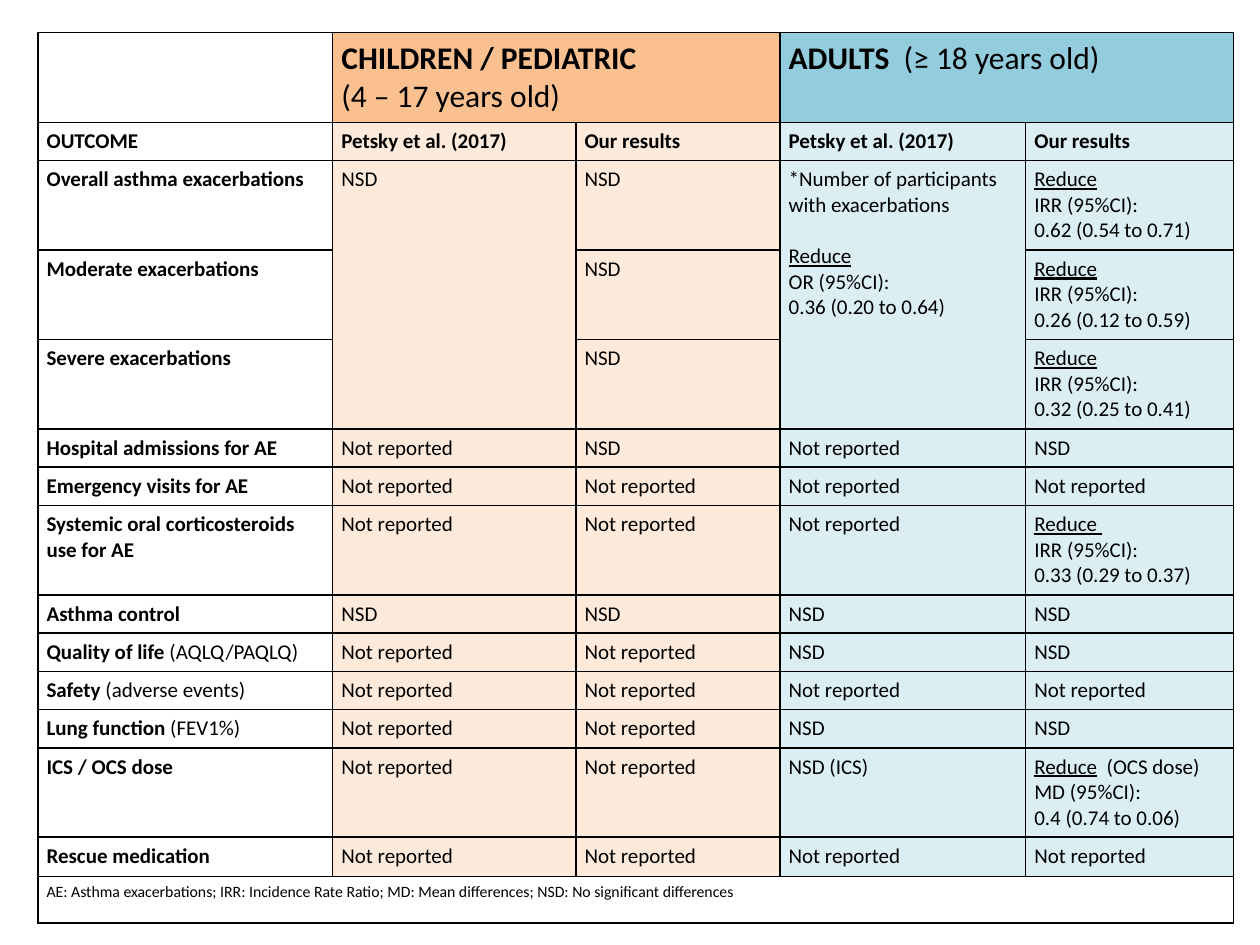
import dataclasses

import pptx
import pptx.dml.color
import pptx.oxml
import pptx.oxml.ns
import pptx.util

Inches = pptx.util.Inches
Pt = pptx.util.Pt


@dataclasses.dataclass(frozen=True)
class Theme:
    font: str = "Calibri"
    ink: str = "000000"
    children_head: str = "FAC090"
    children: str = "FDEADA"
    adults_head: str = "93CDDD"
    adults: str = "DBEEF4"
    head_size: int = 18
    body_size: int = 12
    note_size: int = 9
    border: int = 1
    paragraph_gap: float = 14.6


THEME = Theme()
BOLD = {"bold": True}
UNDERLINE = {"underline": True}
PLAIN = {}

COLUMN_WIDTHS = [2.34, 1.93, 1.62, 1.95, 1.65]
SHORT, TALL = 0.3, 0.7
ROW_HEIGHTS = [TALL, SHORT, TALL, TALL, TALL, SHORT, SHORT, TALL,
               SHORT, SHORT, SHORT, SHORT, TALL, 0.31, 0.37]
NSD = "NSD"
MISSING = "Not reported"


def bold(text, detail=""):
    """A cell of one paragraph: bold text, then optional plain text."""
    return [[(text, BOLD), (detail, PLAIN)]]


def reduced(measure, values, word="Reduce", remark=""):
    """A cell of one paragraph that reports a reduction."""
    return [[(word, UNDERLINE), (f"{remark}\n{measure} (95%CI):\n{values}", PLAIN)]]


PARTICIPANTS = ([[("*Number of participants with exacerbations", PLAIN)]]
                + reduced("OR", "0.36 (0.20 to 0.64)"))

# One row per outcome; None marks a cell covered by a merge
ROWS = [
    [None, bold("CHILDREN / PEDIATRIC ", "\n(4 – 17 years old)"), None,
     bold("ADULTS  ", "(≥ 18 years old)"), None],
    [bold("OUTCOME")] + [bold("Petsky et al. (2017)"), bold("Our results")] * 2,
    [bold("Overall asthma exacerbations"), NSD, NSD, PARTICIPANTS,
     reduced("IRR", "0.62 (0.54 to 0.71)")],
    [bold("Moderate exacerbations"), None, NSD, None,
     reduced("IRR", "0.26 (0.12 to 0.59)")],
    [bold("Severe exacerbations"), None, NSD, None,
     reduced("IRR", "0.32 (0.25 to 0.41)")],
    [bold("Hospital admissions for AE"), MISSING, NSD, MISSING, NSD],
    [bold("Emergency visits for AE")] + [MISSING] * 4,
    [bold("Systemic oral corticosteroids use for AE"), MISSING, MISSING, MISSING,
     reduced("IRR", "0.33 (0.29 to 0.37)", word="Reduce ")],
    [bold("Asthma control")] + [NSD] * 4,
    [bold("Quality of life", " (AQLQ/PAQLQ)"), MISSING, MISSING, NSD, NSD],
    [bold("Safety ", "(adverse events)")] + [MISSING] * 4,
    [bold("Lung function ", "(FEV1%)"), MISSING, MISSING, NSD, NSD],
    [bold("ICS / OCS dose"), MISSING, MISSING, "NSD (ICS)",
     reduced("MD", "0.4 (0.74 to 0.06)", remark="  (OCS dose)")],
    [bold("Rescue medication")] + [MISSING] * 4,
    ["AE: Asthma exacerbations; IRR: Incidence Rate Ratio; "
     "MD: Mean differences; NSD: No significant differences"] + [None] * 4,
]
LAST = len(ROWS) - 1
# First and last cell of each merged area
MERGES = [((0, 1), (0, 2)), ((0, 3), (0, 4)),
          ((2, 1), (4, 1)), ((2, 3), (4, 3)), ((LAST, 0), (LAST, 4))]


def add_span(para, text, style, size):
    """Add text in one style, with a line break at each newline."""
    for index, line in enumerate(text.split("\n")):
        if index:
            para.add_line_break()
        if line:
            span = para.add_run()
            span.text = line
            values = {"name": THEME.font, "size": Pt(size), "bold": False, **style}
            for name, value in values.items():
                setattr(span.font, name, value)
            span.font.color.rgb = pptx.dml.color.RGBColor.from_string(THEME.ink)


def write_cell(cell, content, size):
    paragraphs = [[(content, PLAIN)]] if isinstance(content, str) else content
    for index, spans in enumerate(paragraphs):
        para = cell.text_frame.paragraphs[0]
        if index:
            para = cell.text_frame.add_paragraph()
            para.space_before = Pt(THEME.paragraph_gap)
        for text, style in spans:
            add_span(para, text, style, size)


def add_borders(cell):
    properties = cell._tc.get_or_add_tcPr()
    for side in ("lnL", "lnR", "lnT", "lnB"):
        properties.append(pptx.oxml.parse_xml(
            f'<a:{side} {pptx.oxml.ns.nsdecls("a")} w="{Pt(THEME.border)}">'
            f'<a:solidFill><a:srgbClr val="{THEME.ink}"/></a:solidFill></a:{side}>'))


def fill_cell(cell, row, column):
    if column == 0 or row == LAST:
        cell.fill.background()
        return
    if column < 3:
        color = THEME.children if row else THEME.children_head
    else:
        color = THEME.adults if row else THEME.adults_head
    cell.fill.solid()
    cell.fill.fore_color.rgb = pptx.dml.color.RGBColor.from_string(color)


def add_outcome_table(page):
    frame = page.shapes.add_table(
        len(ROWS), len(COLUMN_WIDTHS), Inches(0.3), Inches(0.26),
        Inches(sum(COLUMN_WIDTHS)), Inches(sum(ROW_HEIGHTS)))
    table = frame.table
    table.first_row = table.horz_banding = False
    for column, width in zip(table.columns, COLUMN_WIDTHS):
        column.width = Inches(width)
    for row, height in zip(table.rows, ROW_HEIGHTS):
        row.height = Inches(height)
    for first, last in MERGES:
        table.cell(*first).merge(table.cell(*last))

    margins = {"margin_left": 0.07, "margin_right": 0.07,
               "margin_top": 0.05, "margin_bottom": 0.05}
    sizes = {0: THEME.head_size, LAST: THEME.note_size}
    for row, contents in enumerate(ROWS):
        for column, content in enumerate(contents):
            cell = table.cell(row, column)
            for name, value in margins.items():
                setattr(cell, name, Inches(value))
            add_borders(cell)
            fill_cell(cell, row, column)
            if content:
                write_cell(cell, content, sizes.get(row, THEME.body_size))


def main():
    deck = pptx.Presentation()
    deck.slide_width, deck.slide_height = Inches(10), Inches(7.5)
    page = deck.slides.add_slide(deck.slide_layouts[6])
    add_outcome_table(page)
    deck.save("out.pptx")


if __name__ == "__main__":
    main()
